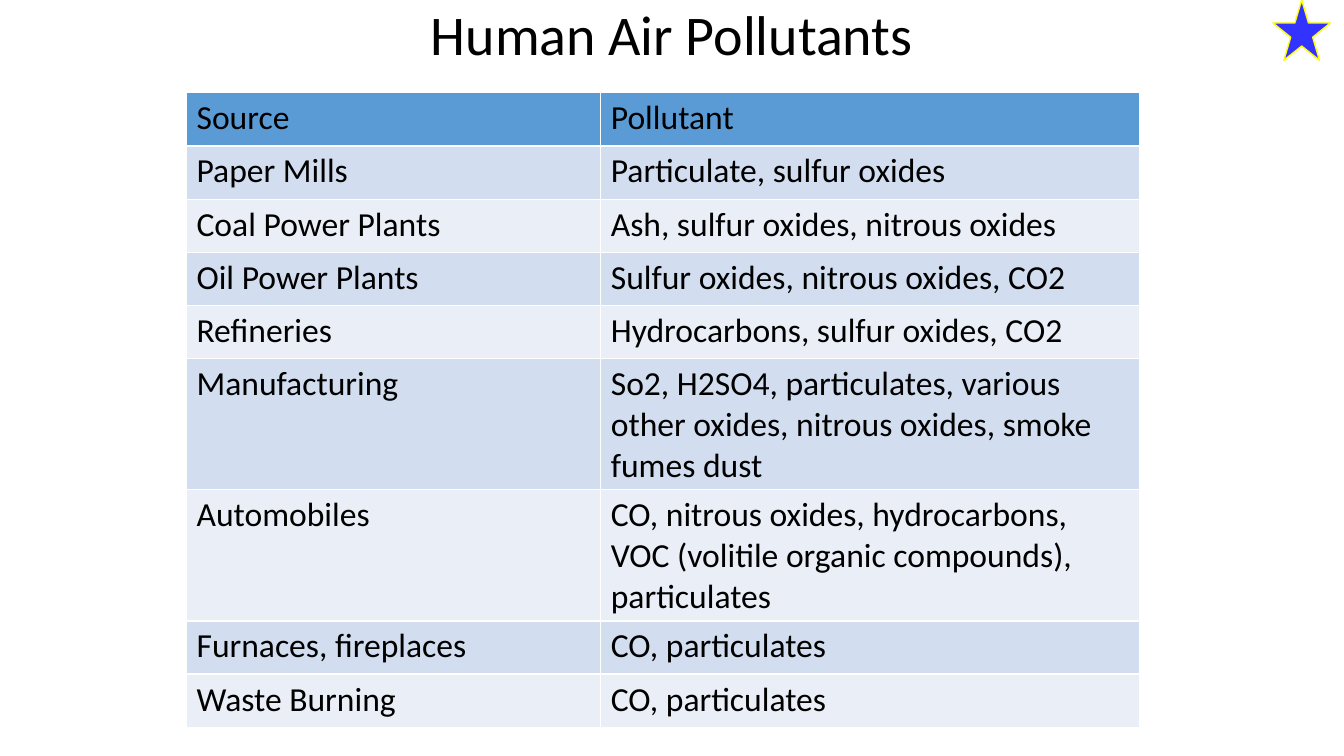
from typing import NamedTuple

from pptx import Presentation
from pptx.dml.color import RGBColor
from pptx.enum.shapes import MSO_SHAPE as Shape
from pptx.enum.text import MSO_ANCHOR as Anchor, PP_ALIGN as Align
from pptx.slide import Slide
from pptx.table import _Cell as Cell
from pptx.text.text import _Paragraph as Paragraph
from pptx.util import Cm, Pt

BLACK = RGBColor(0x00, 0x00, 0x00)
HEADER_BLUE = RGBColor(0x5B, 0x9B, 0xD5)
BAND_DARK = RGBColor(0xD2, 0xDE, 0xEF)
BAND_LIGHT = RGBColor(0xEA, 0xEF, 0xF7)
STAR_BLUE = RGBColor(0x33, 0x33, 0xFF)
STAR_YELLOW = RGBColor(0xFF, 0xFF, 0x00)

FONT = "Calibri"
COLUMN_WIDTHS = (Cm(10.44), Cm(13.59))
ROW_HEIGHT = Cm(1.34)
TALL_ROW_HEIGHT = Cm(3.3)


class Emission(NamedTuple):
    source: str
    pollutant: str
    height: Cm = ROW_HEIGHT


EMISSIONS = (
    Emission("Source", "Pollutant"),
    Emission("Paper Mills", "Particulate, sulfur oxides"),
    Emission("Coal Power Plants", "Ash, sulfur oxides, nitrous oxides"),
    Emission("Oil Power Plants", "Sulfur oxides, nitrous oxides, CO2"),
    Emission("Refineries", "Hydrocarbons, sulfur oxides, CO2"),
    Emission(
        "Manufacturing",
        "So2, H2SO4, particulates, various other oxides, nitrous oxides, smoke fumes dust",
        TALL_ROW_HEIGHT,
    ),
    Emission(
        "Automobiles",
        "CO, nitrous oxides, hydrocarbons, VOC (volitile organic compounds), particulates",
        TALL_ROW_HEIGHT,
    ),
    Emission("Furnaces, fireplaces", "CO, particulates"),
    Emission("Waste Burning", "CO, particulates"),
)


def write(p: Paragraph, text: str, size: int) -> None:
    p.text = text
    for r in p.runs:
        r.font.name = FONT
        r.font.size = Pt(size)
        r.font.bold = False
        r.font.color.rgb = BLACK


def add_title(s: Slide, text: str) -> None:
    tf = s.shapes.add_textbox(Cm(5.5), Cm(0), Cm(22.86), Cm(1.9)).text_frame
    tf.word_wrap = True
    tf.vertical_anchor = Anchor.MIDDLE
    p = tf.paragraphs[0]
    p.alignment = Align.CENTER
    p.line_spacing = 0.9
    write(p, text, 40)


def add_star(s: Slide) -> None:
    star = s.shapes.add_shape(Shape.STAR_5_POINT, Cm(32.08), Cm(0), Cm(1.45), Cm(1.52))
    star.shadow.inherit = False
    star.fill.solid()
    star.fill.fore_color.rgb = STAR_BLUE
    star.line.color.rgb = STAR_YELLOW
    star.line.width = Pt(1)


def fill_cell(cell: Cell, text: str, color: RGBColor) -> None:
    cell.fill.solid()
    cell.fill.fore_color.rgb = color
    write(cell.text_frame.paragraphs[0], text, 24)


def band_color(row: int) -> RGBColor:
    if row == 0:
        return HEADER_BLUE
    return BAND_DARK if row % 2 else BAND_LIGHT


def add_emission_table(s: Slide) -> None:
    """The white grid lines come from the default table style."""
    height = sum(emission.height for emission in EMISSIONS)
    table = s.shapes.add_table(
        len(EMISSIONS), len(COLUMN_WIDTHS), Cm(4.7), Cm(2.34), sum(COLUMN_WIDTHS), height
    ).table
    for column, width in zip(table.columns, COLUMN_WIDTHS):
        column.width = width
    for i, emission in enumerate(EMISSIONS):
        table.rows[i].height = emission.height
        fill_cell(table.cell(i, 0), emission.source, band_color(i))
        fill_cell(table.cell(i, 1), emission.pollutant, band_color(i))


def main() -> None:
    prs = Presentation()
    prs.slide_width, prs.slide_height = Cm(33.87), Cm(19.05)
    s = prs.slides.add_slide(prs.slide_layouts[6])
    add_title(s, "Human Air Pollutants")
    add_star(s)
    add_emission_table(s)
    prs.save("out.pptx")


if __name__ == "__main__":
    main()
